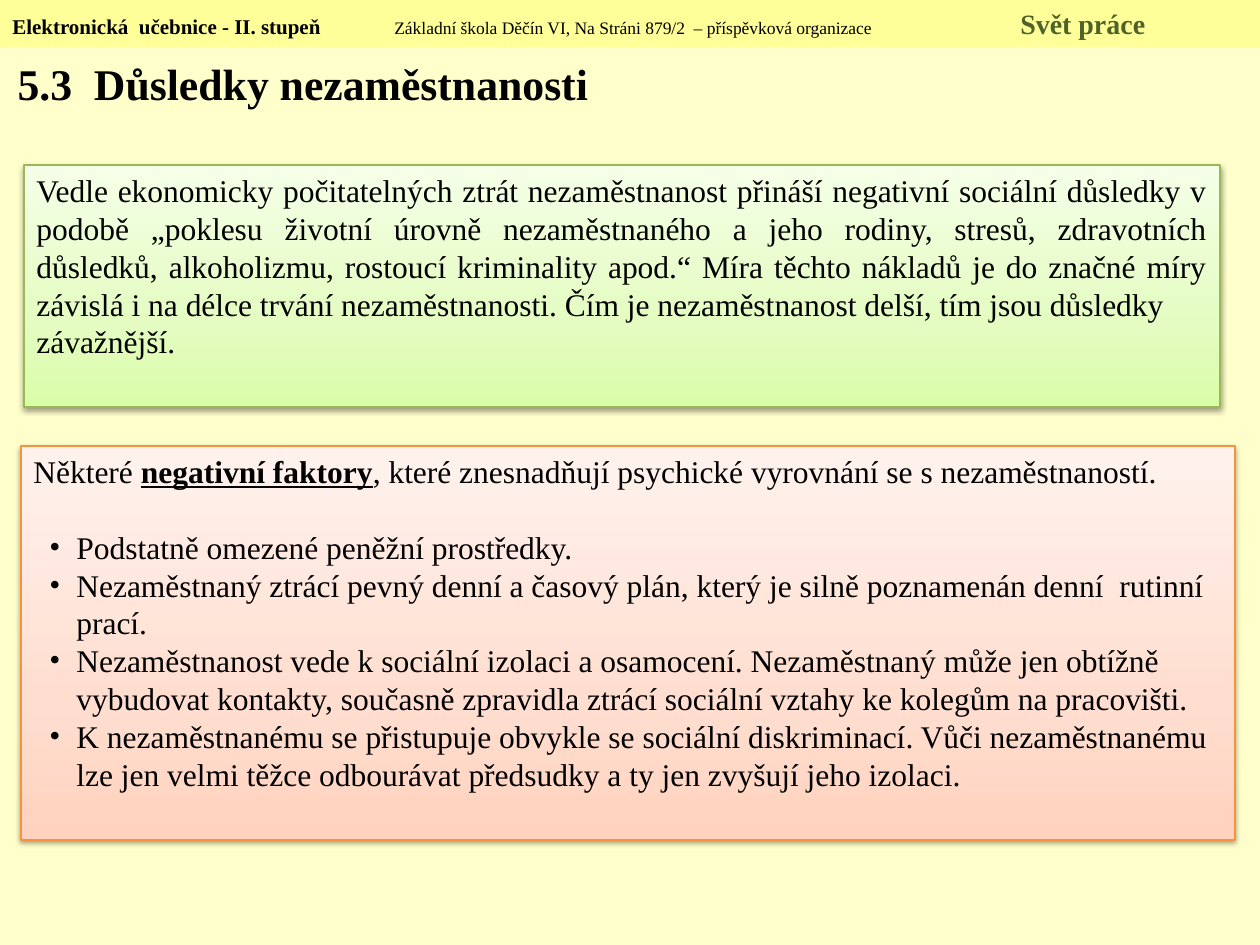
from lxml import etree
from pptx import Presentation
from pptx.dml.color import RGBColor
from pptx.enum.shapes import MSO_SHAPE as Shape
from pptx.enum.text import MSO_ANCHOR as Anchor, PP_ALIGN as Align
from pptx.oxml import parse_xml
from pptx.oxml.ns import nsdecls, qn
from pptx.util import Pt

PX = 914400 / 126  # EMU per px
FONT = "Times New Roman"
BLACK = RGBColor(0x00, 0x00, 0x00)
PAGE = RGBColor(0xFF, 0xFF, 0xCC)
HEADER = RGBColor(0xFF, 0xFF, 0x99)
OLIVE = RGBColor(0x4F, 0x62, 0x28)
GREEN_LINE = RGBColor(0x98, 0xB9, 0x55)
ORANGE_LINE = RGBColor(0xF6, 0x92, 0x40)
GREENS = (RGBColor(0xDA, 0xFD, 0xA7), RGBColor(0xE4, 0xFC, 0xC2), RGBColor(0xF5, 0xFF, 0xE7))
ORANGES = (RGBColor(0xFF, 0xD2, 0xBD), RGBColor(0xFF, 0xDE, 0xD0), RGBColor(0xFF, 0xF2, 0xED))
STOPS = (0, 35, 100)  # gradient positions in percent

CONSEQUENCES = (
    "Vedle ekonomicky počitatelných ztrát nezaměstnanost přináší negativní sociální důsledky "
    "v podobě „poklesu životní úrovně nezaměstnaného a jeho rodiny, stresů, zdravotních "
    "důsledků, alkoholizmu, rostoucí kriminality apod.“ Míra těchto nákladů je do značné míry "
    "závislá i na délce trvání nezaměstnanosti. Čím je nezaměstnanost delší, tím jsou důsledky",
    "závažnější.",
)
FACTORS_INTRO = (
    ("Některé ", False),
    ("negativní faktory", True),
    (", které znesnadňují psychické vyrovnání se s nezaměstnaností.", False),
)
FACTORS = (
    "Podstatně omezené peněžní prostředky.",
    "Nezaměstnaný ztrácí pevný denní a časový plán, který je silně poznamenán denní  rutinní prací.",
    "Nezaměstnanost vede k sociální izolaci a osamocení. Nezaměstnaný může jen obtížně "
    "vybudovat kontakty, současně zpravidla ztrácí sociální vztahy ke kolegům na pracovišti.",
    "K nezaměstnanému se přistupuje obvykle se sociální diskriminací. Vůči nezaměstnanému "
    "lze jen velmi těžce odbourávat předsudky a ty jen zvyšují jeho izolaci.",
)


def px(value):
    return round(value * PX)


def add_run(paragraph, text, size, bold=False, color=BLACK):
    run = paragraph.add_run()
    run.text = text
    font = run.font
    font.name, font.size, font.bold = FONT, Pt(size), bold
    font.color.rgb = color
    return run


def add_rectangle(slide, box):
    shape = slide.shapes.add_shape(Shape.RECTANGLE, *map(px, box))
    shape.shadow.inherit = False
    text_frame = shape.text_frame
    text_frame.word_wrap = True
    text_frame.vertical_anchor = Anchor.TOP
    text_frame.paragraphs[0].alignment = Align.LEFT
    return shape


def set_tabs(paragraph, positions):
    properties = paragraph._p.get_or_add_pPr()
    tabs = etree.SubElement(properties, qn("a:tabLst"))
    for position in positions:
        etree.SubElement(tabs, qn("a:tab"), pos=str(px(position)), algn="l")


def set_bullet(paragraph, margin, hanging):
    properties = paragraph._p.get_or_add_pPr()
    properties.set("marL", str(px(margin)))
    properties.set("indent", str(-px(hanging)))
    etree.SubElement(properties, qn("a:buFont"), typeface=FONT)
    etree.SubElement(properties, qn("a:buChar"), char="•")


def add_header(slide, box):
    shape = add_rectangle(slide, box)
    shape.fill.solid()
    shape.fill.fore_color.rgb = HEADER
    shape.line.fill.background()
    paragraph = shape.text_frame.paragraphs[0]
    set_tabs(paragraph, (382, 1008))
    add_run(paragraph, "Elektronická  učebnice - II. stupeň\t", 12, bold=True)
    add_run(paragraph, "Základní škola Děčín VI, Na Stráni 879/2  – příspěvková organizace\t", 10)
    add_run(paragraph, "Svět práce", 16, bold=True, color=OLIVE)


def place_title(slide, box):
    title = slide.shapes.title
    title.left, title.top, title.width, title.height = map(px, box)
    title.text_frame.vertical_anchor = Anchor.TOP
    paragraph = title.text_frame.paragraphs[0]
    paragraph.alignment = Align.LEFT
    add_run(paragraph, "5.3  Důsledky nezaměstnanosti", 25, bold=True)


def add_panel(slide, box, colors, line_color):
    """Gradient rectangle with a thin outline and a soft shadow below."""
    shape = add_rectangle(slide, box)
    shape.line.color.rgb = line_color
    shape.line.width = Pt(0.75)
    shape.fill.gradient()
    shape.fill.gradient_angle = 90
    properties = shape._element.spPr
    stops = properties.find(qn("a:gradFill")).find(qn("a:gsLst"))
    for stop in list(stops):
        stops.remove(stop)
    for position, color in zip(STOPS, colors):
        stop = etree.SubElement(stops, qn("a:gs"), pos=str(position * 1000))
        etree.SubElement(stop, qn("a:srgbClr"), val=str(color))
    properties.find(qn("a:effectLst")).append(parse_xml(
        f'<a:outerShdw {nsdecls("a")} blurRad="40000" dist="20000" dir="5400000" rotWithShape="0">'
        '<a:srgbClr val="000000"><a:alpha val="38000"/></a:srgbClr></a:outerShdw>'))
    return shape.text_frame


def add_consequences(slide, box):
    text_frame = add_panel(slide, box, GREENS, GREEN_LINE)
    for index, text in enumerate(CONSEQUENCES):
        paragraph = text_frame.add_paragraph() if index else text_frame.paragraphs[0]
        paragraph.alignment = Align.JUSTIFY
        add_run(paragraph, text, 18)


def add_factors(slide, box):
    text_frame = add_panel(slide, box, ORANGES, ORANGE_LINE)
    for text, marked in FACTORS_INTRO:
        run = add_run(text_frame.paragraphs[0], text, 18, bold=marked)
        run.font.underline = marked
    for index, text in enumerate(FACTORS):
        paragraph = text_frame.add_paragraph()
        paragraph.alignment = Align.LEFT
        if index == 0:
            paragraph.space_before = Pt(21.6)
        set_bullet(paragraph, margin=43, hanging=27)
        add_run(paragraph, text, 18)


def main():
    presentation = Presentation()
    presentation.slide_width, presentation.slide_height = px(1260), px(945)
    slide = presentation.slides.add_slide(presentation.slide_layouts[5])
    slide.background.fill.solid()
    slide.background.fill.fore_color.rgb = PAGE
    add_header(slide, (0, 0, 1260, 47))
    add_consequences(slide, (24, 165, 1196, 242))
    add_factors(slide, (21, 446, 1214, 394))
    place_title(slide, (5, 50, 1260, 67))
    presentation.save("out.pptx")


if __name__ == "__main__":
    main()
